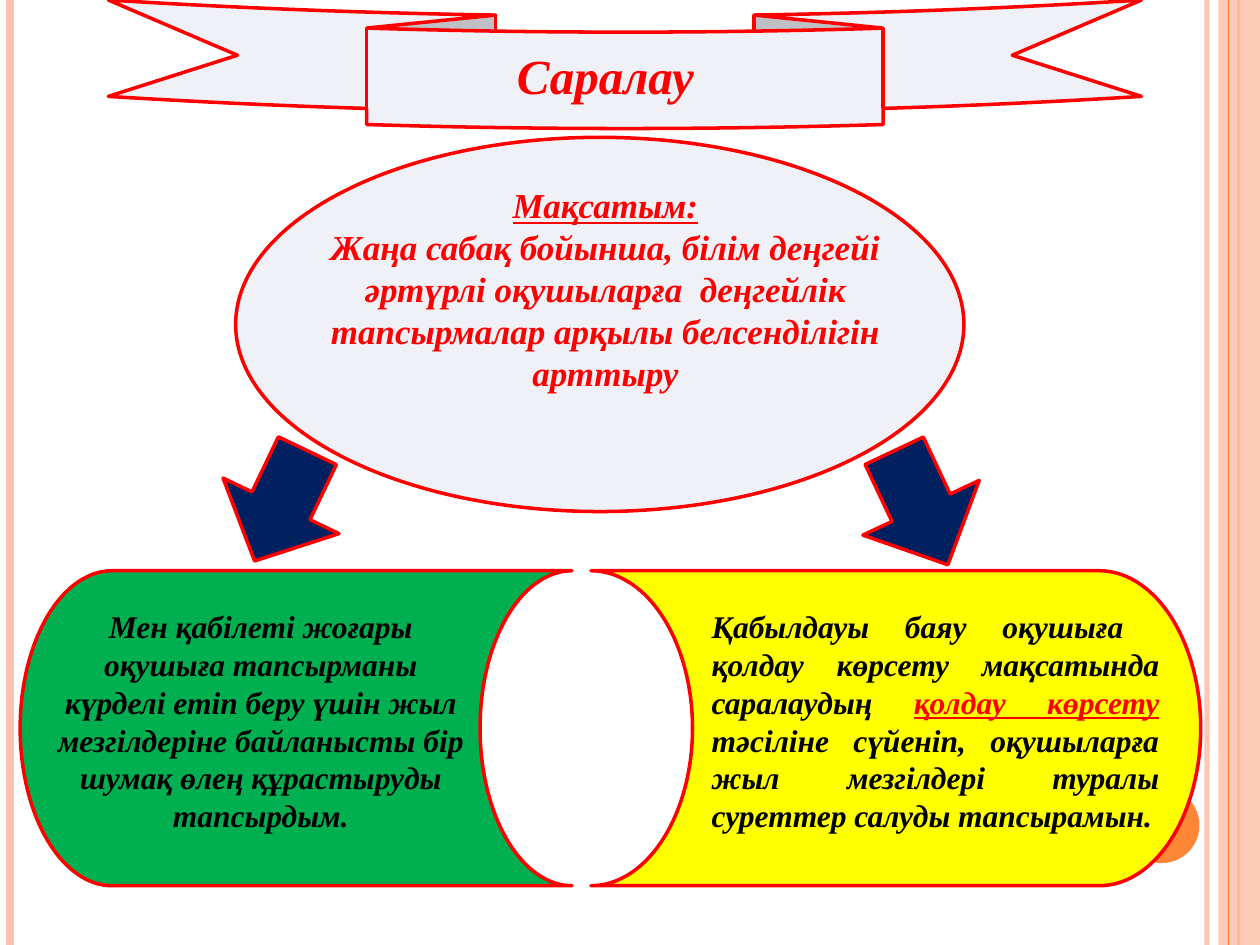
"""Build the «Саралау» slide: a ribbon title, an aim and two differentiated tasks."""
import pptx
import pptx.dml.color
import pptx.enum.shapes
import pptx.enum.text
import pptx.oxml.ns
import pptx.util
from lxml import etree

Inches, Pt = pptx.util.Inches, pptx.util.Pt
SHAPE = pptx.enum.shapes.MSO_SHAPE
ALIGN = pptx.enum.text.PP_ALIGN
RED, BLACK, PALE, NAVY = "FF0000", "000000", "EFF1F7", "002060"
ORANGE, PEACH = "FE8637", "FEC3AE"

# kind, box, fill, line, opacity
STRIPES = [(9.58, PEACH, 3, 93), (0.08, PEACH, 4.5, 100), (9.83, ORANGE, 1.5, 100)]
EDGE_BAND = (SHAPE.RECTANGLE, (9.67, 0, 0.33, 7.5), PEACH)
EDGE_LINE = (9.75, ORANGE, 0.75, 100)
EDGE_DOT = (SHAPE.OVAL, (8.92, 6.25, 0.6, 0.6), ORANGE)

DIAGRAM = [
    (SHAPE.OVAL, (1.87, 1.09, 5.78, 2.97), PALE, 0, False),
    (SHAPE.DOWN_ARROW, (6.8, 3.53, 1.02, 1), NAVY, 334.8, False),
    (SHAPE.DOWN_ARROW, (1.72, 3.53, 1.02, 0.97), NAVY, 25.6, False),
    (SHAPE.CURVED_DOWN_RIBBON, (0.86, 0, 8.2, 1.02), PALE, 0, False),
    (SHAPE.FLOWCHART_STORED_DATA, (0.16, 4.53, 4.38, 2.5), "00B050", 0, False),
    (SHAPE.FLOWCHART_STORED_DATA, (4.69, 4.53, 4.84, 2.5), "FFFF00", 0, True),
]

TITLE = ((2.89, 0.31, 3.83, 0.57), 28, ALIGN.CENTER, [[("Саралау", RED, False)]])
TEXTS = [
    ((2.11, 1.41, 5.39, 2.09), 20, ALIGN.CENTER, [
        [("Мақсатым:", RED, True)],
        [("Жаңа сабақ бойынша, білім деңгейі әртүрлі оқушыларға  деңгейлік "
          "тапсырмалар арқылы белсенділігін арттыру", RED, False)],
    ]),
    ((0.31, 4.77, 3.52, 2.19), 18, ALIGN.CENTER, [
        [("Мен қабілеті жоғары оқушыға тапсырманы күрделі етіп беру үшін жыл "
          "мезгілдеріне байланысты бір шумақ өлең құрастыруды тапсырдым.", BLACK, False)],
    ]),
    ((5.55, 4.77, 3.75, 1.92), 18, ALIGN.JUSTIFY, [
        [("Қабылдауы баяу оқушыға  қолдау көрсету мақсатында саралаудың ", BLACK, False),
         ("қолдау көрсету", RED, True),
         (" ", RED, False),
         ("тәсіліне сүйеніп, оқушыларға жыл мезгілдері туралы суреттер салуды "
          "тапсырамын.", BLACK, False)],
    ]),
]


def paint(fmt, color, opacity=100):
    fmt.solid()
    fmt.fore_color.rgb = pptx.dml.color.RGBColor.from_string(color)
    if opacity < 100:
        clr = fmt._xPr.find(".//" + pptx.oxml.ns.qn("a:srgbClr"))
        etree.SubElement(clr, pptx.oxml.ns.qn("a:alpha"), val=str(opacity * 1000))


def add_stripe(s, x, color, width, opacity):
    c = s.shapes.add_connector(pptx.enum.shapes.MSO_CONNECTOR.STRAIGHT,
                               Inches(x), 0, Inches(x), Inches(7.5))
    paint(c.line.fill, color, opacity)
    c.line.width = Pt(width)
    etree.SubElement(c._element.spPr, pptx.oxml.ns.qn("a:effectLst"))


def add_shape(s, kind, box, fill, opacity=100):
    sp = s.shapes.add_shape(kind, *map(Inches, box))
    sp.shadow.inherit = False
    paint(sp.fill, fill, opacity)
    sp.line.fill.background()
    return sp


def add_outlined(s, kind, box, fill, angle, flip):
    sp = add_shape(s, kind, box, fill)
    paint(sp.line.fill, RED)
    sp.line.width = Pt(2)
    sp.rotation = angle
    if flip:
        sp._element.spPr.xfrm.set("flipH", "1")


def write(sp, box, size, align, paragraphs):
    sp.left, sp.top, sp.width, sp.height = map(Inches, box)
    tf = sp.text_frame
    tf.word_wrap = True
    tf.auto_size = pptx.enum.text.MSO_AUTO_SIZE.SHAPE_TO_FIT_TEXT
    tf.vertical_anchor = pptx.enum.text.MSO_ANCHOR.TOP
    for i, runs in enumerate(paragraphs):
        p = tf.add_paragraph() if i else tf.paragraphs[0]
        p.alignment = align
        for text, color, underline in runs:
            r = p.add_run()
            r.text = text
            r.font.name, r.font.size = "Times New Roman", Pt(size)
            r.font.bold = r.font.italic = True
            r.font.underline = underline
            paint(r.font.fill, color)


def main():
    prs = pptx.Presentation()
    prs.slide_width, prs.slide_height = Inches(10), Inches(7.5)
    s = prs.slides.add_slide(prs.slide_layouts[5])
    paint(s.background.fill, "FFFFFF")
    for stripe in STRIPES:
        add_stripe(s, *stripe)
    add_shape(s, *EDGE_BAND, opacity=87)
    add_stripe(s, *EDGE_LINE)
    add_shape(s, *EDGE_DOT)
    for item in DIAGRAM:
        add_outlined(s, *item)
    title = s.shapes.title
    s.shapes._spTree.append(title._element)
    write(title, *TITLE)
    for text in TEXTS:
        write(s.shapes.add_textbox(*map(Inches, text[0])), *text)
    prs.save("out.pptx")


if __name__ == "__main__":
    main()
